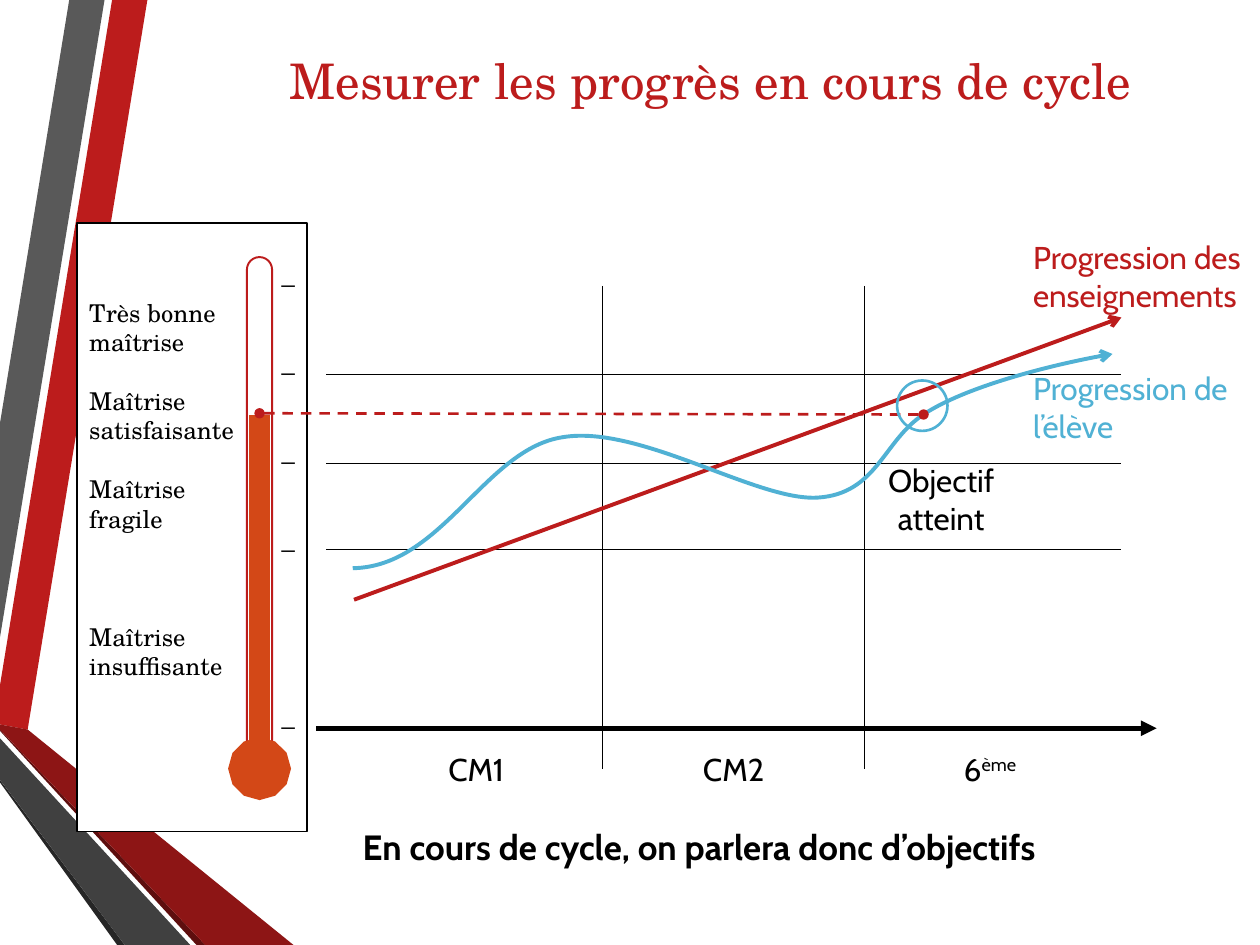
from lxml.etree import SubElement
from pptx import Presentation
from pptx.dml.color import RGBColor
from pptx.enum.dml import MSO_LINE
from pptx.enum.shapes import MSO_CONNECTOR, MSO_SHAPE
from pptx.enum.text import MSO_ANCHOR, MSO_AUTO_SIZE, PP_ALIGN
from pptx.oxml.ns import qn
from pptx.util import Inches, Pt

COLORS = {
    "red": "BC1C1C", "dark_red": "8D1515", "deep_red": "5E0E0E",
    "gray": "595959", "dark_gray": "404040", "deep_gray": "262626",
    "mercury": "D34817", "pupil": "50B1D4", "black": "000000", "white": "FFFFFF",
}
SERIF, SANS = "TeX Gyre Schola", "Cabin"

BANDS = [
    ("red", [(0, 5.44), (0, 5.75), (0.22, 5.79), (1.17, 0), (0.89, 0)]),
    ("gray", [(0.83, 0), (0.55, 0), (0, 3.36), (0, 5.06)]),
    ("deep_gray", [(0, 6.19), (0, 6.21), (0.93, 7.5), (0.99, 7.5)]),
    ("deep_red", [(0, 5.79), (0, 5.8), (1.56, 7.5), (1.63, 7.5)]),
    ("dark_red", [(0, 5.79), (1.63, 7.5), (2.33, 7.5), (0.22, 5.79), (0, 5.75)]),
    ("dark_gray", [(0, 6.19), (0.99, 7.5), (1.51, 7.5), (0, 5.86)]),
]
# Start point, then two control points and an end point per Bézier segment
PUPIL_CURVE = [
    (2.8, 4.51),
    (3.51, 4.5), (3.85, 3.56), (4.47, 3.47),
    (5.08, 3.37), (6.01, 3.98), (6.49, 3.95),
    (6.96, 3.92), (7.01, 3.5), (7.33, 3.29),
    (7.66, 3.07), (8.45, 2.87), (8.83, 2.81),
]
# Text, space before in points
SCALE = [
    ("–", 0), ("Très bonne\nmaîtrise", 0),
    ("–", 0), ("Maîtrise\nsatisfaisante", 0),
    ("–", 0), ("Maîtrise\nfragile", 0),
    ("–", 0), ("Maîtrise\ninsuffisante", 34),
    ("–", 17),
]


def rgb(name):
    return RGBColor.from_string(COLORS[name])


def style_line(line, color, width, head=None, tail=None):
    line.color.rgb = rgb(color)
    line.width = Pt(width)
    ln = line._get_or_add_ln()
    for end, kind in (("a:headEnd", head), ("a:tailEnd", tail)):
        if kind:
            SubElement(ln, qn(end)).set("type", kind)


def style_shape(shape, fill=None, line=None, width=1.1, tail=None):
    shape.shadow.inherit = False
    if fill:
        shape.fill.solid()
        shape.fill.fore_color.rgb = rgb(fill)
    else:
        shape.fill.background()
    if line:
        style_line(shape.line, line, width, tail=tail)
    else:
        shape.line.fill.background()


def add_preset(slide, kind, box, **style):
    shape = slide.shapes.add_shape(kind, *map(Inches, box))
    style_shape(shape, **style)
    return shape


def add_outline(slide, points, close, **style):
    start, *others = [(Inches(x), Inches(y)) for x, y in points]
    builder = slide.shapes.build_freeform(*start)
    builder.add_line_segments(others, close=close)
    shape = builder.convert_to_shape()
    style_shape(shape, **style)
    return shape


def add_curve(slide, points, **style):
    """Draw an open outline and turn each three segments into one Bézier curve."""
    shape = add_outline(slide, points, close=False, **style)
    path = next(shape._element.iter(qn("a:path")))
    segments = path.findall(qn("a:lnTo"))
    for first in range(0, len(segments), 3):
        bezier = SubElement(path, qn("a:cubicBezTo"))
        for segment in segments[first:first + 3]:
            bezier.append(segment[0])
            path.remove(segment)


def add_line(slide, start, end, color="black", width=0.75, dash=None, **ends):
    connector = slide.shapes.add_connector(
        MSO_CONNECTOR.STRAIGHT, *map(Inches, start + end))
    if dash:
        connector.line.dash_style = dash
    style_line(connector.line, color, width, **ends)
    SubElement(connector._element.spPr, qn("a:effectLst"))


def style_paragraph(paragraph, size, color, font, bold=False):
    paragraph.font.size = Pt(size)
    paragraph.font.name = font
    paragraph.font.bold = bold
    paragraph.font.color.rgb = rgb(color)


def add_text(slide, box, lines, size=18, color="black", font=SANS, bold=False,
             align=PP_ALIGN.LEFT, wrap=False):
    frame = slide.shapes.add_textbox(*map(Inches, box)).text_frame
    frame.word_wrap = wrap
    frame.auto_size = MSO_AUTO_SIZE.SHAPE_TO_FIT_TEXT
    for index, text in enumerate(lines):
        paragraph = frame.add_paragraph() if index else frame.paragraphs[0]
        paragraph.text = text
        paragraph.alignment = align
        style_paragraph(paragraph, size, color, font, bold)
    return frame


def add_title(slide):
    frame = add_text(slide, (2.2, 0.3, 7.34, 0.62),
                     ["Mesurer les progrès en cours de cycle"],
                     size=28, color="red", font=SERIF, wrap=True)
    frame.auto_size = MSO_AUTO_SIZE.NONE
    frame.vertical_anchor = MSO_ANCHOR.BOTTOM
    frame.paragraphs[0].line_spacing = 0.9


def add_thermometer(slide):
    add_preset(slide, MSO_SHAPE.RECTANGLE, (0.61, 1.77, 1.83, 4.83),
               fill="white", line="black")
    tube = add_preset(slide, MSO_SHAPE.ROUNDED_RECTANGLE, (1.96, 2.04, 0.2, 4.22),
                      line="red")
    tube.adjustments[0] = 0.5
    scale = add_text(slide, (0.61, 2.08, 1.83, 3.87), [text for text, _ in SCALE],
                     size=14, font=SERIF, wrap=True)
    for paragraph, (text, gap) in zip(scale.paragraphs, SCALE):
        paragraph.space_before = Pt(gap)
        if text == "–":
            paragraph.alignment = PP_ALIGN.RIGHT
    add_line(slide, (2.06, 6.1), (2.06, 3.29), "mercury", 12, head="oval")


def add_grid(slide):
    add_line(slide, (2.51, 5.78), (9.18, 5.78), width=3, tail="triangle")
    for y in (2.97, 3.68, 4.36):
        add_line(slide, (2.59, y), (8.9, y))
    for x in (4.78, 6.86):
        add_line(slide, (x, 2.27), (x, 6.1))
    add_text(slide, (3.46, 5.9, 0.67, 0.4), ["CM1"])
    add_text(slide, (5.48, 5.9, 0.69, 0.4), ["CM2"])
    sixth = add_text(slide, (7.55, 5.9, 0.64, 0.4), ["6"]).paragraphs[0]
    ordinal = sixth.add_run()
    ordinal.text = "ème"
    ordinal.font._element.set("baseline", "30000")


def add_progressions(slide):
    add_line(slide, (2.81, 4.76), (8.9, 2.52), "red", 2.25, tail="arrow")
    add_text(slide, (8.1, 1.84, 1.85, 0.71),
             ["Progression des", "enseignements"], color="red")
    add_curve(slide, PUPIL_CURVE, line="pupil", width=2.25, tail="arrow")
    add_text(slide, (8.1, 2.88, 1.85, 0.71), ["Progression de l’élève"],
             color="pupil", wrap=True)


def add_goal(slide):
    add_line(slide, (2.06, 3.28), (7.33, 3.29), "red", 1.5, MSO_LINE.DASH,
             head="oval", tail="oval")
    add_text(slide, (6.92, 3.61, 1.1, 0.71), ["Objectif", "atteint"],
             align=PP_ALIGN.CENTER)
    add_text(slide, (2.78, 6.5, 5.92, 0.44),
             ["En cours de cycle, on parlera donc d’objectifs"],
             size=20, bold=True, wrap=True)
    add_preset(slide, MSO_SHAPE.OVAL, (7.12, 3.02, 0.4, 0.4), line="pupil", width=1.5)


def main():
    deck = Presentation()
    deck.slide_width, deck.slide_height = Inches(10), Inches(7.5)
    slide = deck.slides.add_slide(deck.slide_layouts[6])
    for color, points in BANDS:
        add_outline(slide, points, close=True, fill=color)
    add_title(slide)
    add_thermometer(slide)
    add_grid(slide)
    add_progressions(slide)
    add_goal(slide)
    deck.save("out.pptx")


if __name__ == "__main__":
    main()
